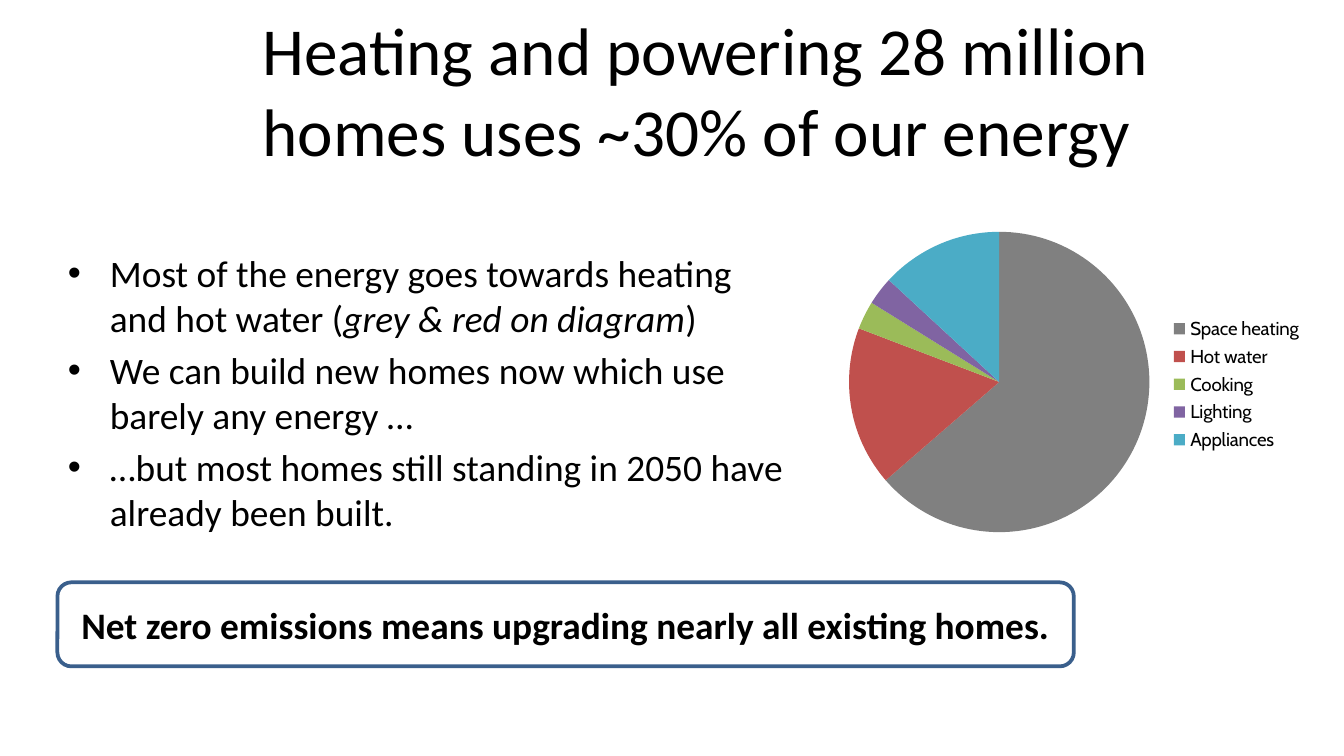
from lxml import etree
from pptx import Presentation
from pptx.chart.data import CategoryChartData
from pptx.dml.color import RGBColor
from pptx.enum.chart import XL_CHART_TYPE, XL_LEGEND_POSITION
from pptx.enum.shapes import MSO_SHAPE
from pptx.enum.text import MSO_ANCHOR, PP_ALIGN
from pptx.oxml import parse_xml
from pptx.oxml.ns import nsdecls, qn
from pptx.util import Pt

PIE = XL_CHART_TYPE.PIE
LEGEND_RIGHT = XL_LEGEND_POSITION.RIGHT
ROUNDED_RECTANGLE = MSO_SHAPE.ROUNDED_RECTANGLE
BOTTOM, MIDDLE = MSO_ANCHOR.BOTTOM, MSO_ANCHOR.MIDDLE
CENTER = PP_ALIGN.CENTER

PX = 9525
BODY_FONT, LEGEND_FONT = "Calibri", "Cabin"
BLACK = RGBColor(0x00, 0x00, 0x00)
OUTLINE_BLUE = RGBColor(0x3A, 0x5F, 0x8C)
GREY = RGBColor(0x80, 0x80, 0x80)
RED = RGBColor(0xC0, 0x50, 0x4D)
GREEN = RGBColor(0x9B, 0xBB, 0x59)
PURPLE = RGBColor(0x80, 0x64, 0xA2)
TURQUOISE = RGBColor(0x4B, 0xAC, 0xC6)

TITLE = "Heating and powering 28 million homes uses ~30% of our energy"
BULLETS = [
    [
        ("Most of the energy goes towards heating and hot water (", False),
        ("grey & red on diagram", True),
        (")", False),
    ],
    [("We can build new homes now which use barely any energy …", False)],
    [("…but most homes still standing in 2050 have already been built.", False)],
]
CONCLUSION = "Net zero emissions means upgrading nearly all existing homes."
ENERGY_USES = [
    ("Space heating", 63, GREY),
    ("Hot water", 17, RED),
    ("Cooking", 3, GREEN),
    ("Lighting", 3, PURPLE),
    ("Appliances", 13, TURQUOISE),
]
PLOT_LAYOUT = {"x": 0.04, "y": 0.15, "w": 0.62, "h": 0.69}


def to_emu(box):
    """Turn a box of left, top, width and height in px into EMU."""
    return [length * PX for length in box]


def style_font(font, size, name=BODY_FONT):
    """Give a font its name, size and black colour."""
    font.name = name
    font.size = Pt(size)
    font.color.rgb = BLACK


def add_title(slide, box):
    """Place the title against the bottom of its box."""
    frame = slide.shapes.add_textbox(*to_emu(box)).text_frame
    frame.word_wrap = True
    frame.vertical_anchor = BOTTOM
    paragraph = frame.paragraphs[0]
    paragraph.text = TITLE
    style_font(paragraph.font, 36)


def add_bullets(slide, box):
    """Place the bulleted list in its box."""
    frame = slide.shapes.add_textbox(*to_emu(box)).text_frame
    frame.word_wrap = True
    for index, parts in enumerate(BULLETS):
        paragraph = frame.add_paragraph() if index else frame.paragraphs[0]
        if index:
            paragraph.space_before = Pt(4)
        properties = paragraph._p.get_or_add_pPr()
        properties.set("marL", str(30 * PX))
        properties.set("indent", str(-30 * PX))
        etree.SubElement(properties, qn("a:buFont")).set("typeface", "Arial")
        etree.SubElement(properties, qn("a:buChar")).set("char", "•")
        style_font(paragraph.font, 20)
        for text, italic in parts:
            run = paragraph.add_run()
            run.text = text
            if italic:
                run.font.italic = True


def add_energy_chart(slide, box):
    """Place the pie of household energy uses with its legend on the right."""
    names, values, colors = zip(*ENERGY_USES)
    data = CategoryChartData()
    data.categories = names
    data.add_series("Series 1", values)
    chart = slide.shapes.add_chart(PIE, *to_emu(box), data).chart
    style_font(chart.font, 10)
    chart.has_title = False
    chart.has_legend = True
    chart.legend.position = LEGEND_RIGHT
    chart.legend.include_in_layout = False
    style_font(chart.legend.font, 10, LEGEND_FONT)
    plot = chart.plots[0]
    plot.vary_by_categories = True
    for index, color in enumerate(colors):
        fill = plot.series[0].points[index].format.fill
        fill.solid()
        fill.fore_color.rgb = color
    modes = '<c:xMode val="edge"/><c:yMode val="edge"/>'
    sizes = "".join(f'<c:{key} val="{value}"/>' for key, value in PLOT_LAYOUT.items())
    layout = parse_xml(
        f'<c:layout {nsdecls("c")}><c:manualLayout><c:layoutTarget val="inner"/>'
        f"{modes}{sizes}</c:manualLayout></c:layout>"
    )
    plot_area = chart._chartSpace.chart.plotArea
    for automatic_layout in plot_area.findall(qn("c:layout")):
        plot_area.remove(automatic_layout)
    plot_area.insert(0, layout)


def add_conclusion(slide, box):
    """Place the outlined conclusion."""
    shape = slide.shapes.add_shape(ROUNDED_RECTANGLE, *to_emu(box))
    shape.shadow.inherit = False
    shape.fill.background()
    shape.line.color.rgb = OUTLINE_BLUE
    shape.line.width = Pt(2)
    frame = shape.text_frame
    frame.word_wrap = True
    frame.vertical_anchor = MIDDLE
    paragraph = frame.paragraphs[0]
    paragraph.text = CONCLUSION
    paragraph.alignment = CENTER
    style_font(paragraph.font, 20)
    paragraph.font.bold = True


def main():
    """Build the slide and save the presentation."""
    presentation = Presentation()
    presentation.slide_width = 960 * PX
    presentation.slide_height = 540 * PX
    slide = presentation.slides.add_slide(presentation.slide_layouts[6])
    add_title(slide, (178, 21, 763, 105))
    add_energy_chart(slide, (592, 119, 348, 311))
    add_bullets(slide, (39, 174, 538, 325))
    add_conclusion(slide, (41, 416, 726, 60))
    presentation.save("out.pptx")


if __name__ == "__main__":
    main()
